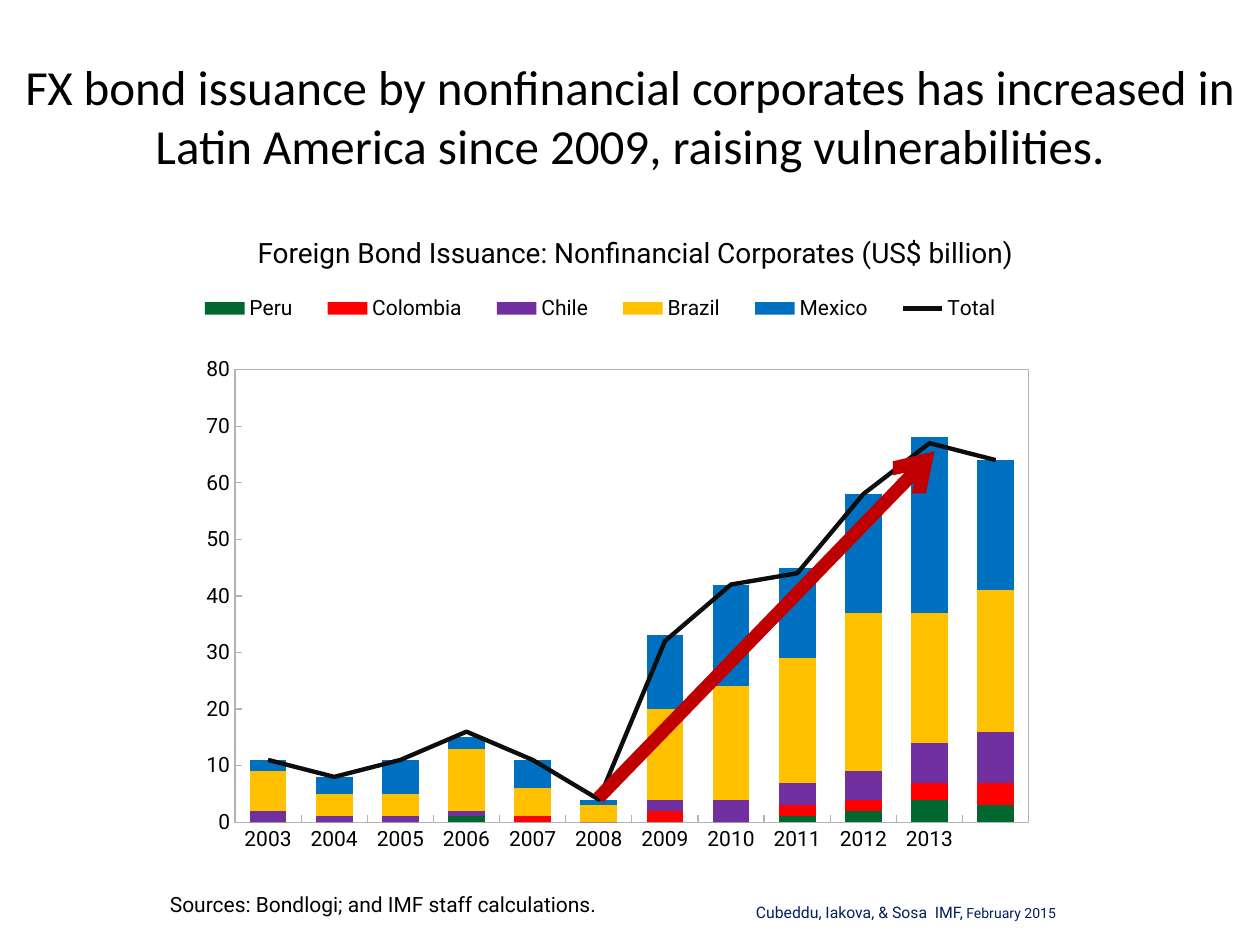
from dataclasses import dataclass

from lxml import etree
from pptx import Presentation
from pptx.chart.data import CategoryChartData
from pptx.dml.color import RGBColor
from pptx.enum.chart import XL_CHART_TYPE, XL_LEGEND_POSITION, XL_TICK_MARK
from pptx.enum.shapes import MSO_CONNECTOR
from pptx.enum.text import MSO_ANCHOR, MSO_AUTO_SIZE, PP_ALIGN
from pptx.oxml import parse_xml
from pptx.oxml.ns import qn
from pptx.util import Pt


@dataclass(frozen=True)
class Theme:
    title_font: str = "Calibri"
    body_font: str = "Roboto"
    title_size: int = 28
    heading_size: int = 16
    body_size: int = 12
    credit_size: int = 9
    date_size: int = 8
    text: str = "000000"
    credit: str = "002060"
    axis: str = "B3B3B3"
    total: str = "0D0D0D"
    arrow: str = "C00000"


THEME = Theme()
NAMESPACES = (
    'xmlns:c="http://schemas.openxmlformats.org/drawingml/2006/chart" '
    'xmlns:a="http://schemas.openxmlformats.org/drawingml/2006/main"'
)

# The last bar carries no year label
YEARS = [str(year) for year in range(2003, 2014)] + [""]
COUNTRIES = {
    "Peru": ("00682F", (0, 0, 0, 1, 0, 0, 0, 0, 1, 2, 4, 3)),
    "Colombia": ("FF0000", (0, 0, 0, 0, 1, 0, 2, 0, 2, 2, 3, 4)),
    "Chile": ("7030A0", (2, 1, 1, 1, 0, 0, 2, 4, 4, 5, 7, 9)),
    "Brazil": ("FFC000", (7, 4, 4, 11, 5, 3, 16, 20, 22, 28, 23, 25)),
    "Mexico": ("0070C0", (2, 3, 6, 2, 5, 1, 13, 18, 16, 21, 31, 23)),
}
TOTAL = (11, 8, 11, 16, 11, 4, 32, 42, 44, 58, 67, 64)


def color(code):
    return RGBColor.from_string(code)


def format_font(font, name, size, code):
    font.name = name
    font.size = Pt(size)
    font.color.rgb = color(code)


def add_title(slide, text):
    title = slide.shapes.title
    title.left, title.top, title.width, title.height = Pt(0), Pt(30), Pt(720), Pt(72)
    frame = title.text_frame
    frame.text = text
    frame.auto_size = MSO_AUTO_SIZE.NONE
    frame.vertical_anchor = MSO_ANCHOR.MIDDLE
    para = frame.paragraphs[0]
    para.alignment = PP_ALIGN.CENTER
    format_font(para.runs[0].font, THEME.title_font, THEME.title_size, THEME.text)


def add_label(slide, bounds, spans, code, align=PP_ALIGN.CENTER,
              anchor=MSO_ANCHOR.TOP, margins=(0, 0)):
    """Add one paragraph made of (text, size) spans."""
    box = slide.shapes.add_textbox(*map(Pt, bounds))
    frame = box.text_frame
    frame.word_wrap = True
    frame.vertical_anchor = anchor
    frame.margin_left = frame.margin_right = Pt(margins[0])
    frame.margin_top = frame.margin_bottom = Pt(margins[1])
    para = frame.paragraphs[0]
    para.alignment = align
    for text, size in spans:
        span = para.add_run()
        span.text = text
        format_font(span.font, THEME.body_font, size, code)


def manual_layout(left, top, width, height, inner=False):
    target = '<c:layoutTarget val="inner"/>' if inner else ""
    return parse_xml(
        f"<c:layout {NAMESPACES}><c:manualLayout>{target}"
        '<c:xMode val="edge"/><c:yMode val="edge"/>'
        f'<c:x val="{left}"/><c:y val="{top}"/><c:w val="{width}"/><c:h val="{height}"/>'
        "</c:manualLayout></c:layout>"
    )


def remove_children(parent, tag):
    for child in parent.findall(qn(tag)):
        parent.remove(child)


def move_last_series_to_line(plot_area):
    """Turn the last bar series into a line on the same axes."""
    bars = plot_area.find(qn("c:barChart"))
    series = bars.findall(qn("c:ser"))[-1]
    remove_children(series, "c:invertIfNegative")
    line = parse_xml(
        f'<c:lineChart {NAMESPACES}><c:grouping val="standard"/>'
        '<c:varyColors val="0"/><c:marker val="1"/></c:lineChart>'
    )
    line.insert(2, series)
    for axis in bars.findall(qn("c:axId")):
        etree.SubElement(line, qn("c:axId")).set("val", axis.get("val"))
    bars.addnext(line)


def format_axis(axis):
    axis.has_major_gridlines = False
    axis.major_tick_mark = XL_TICK_MARK.INSIDE
    axis.minor_tick_mark = XL_TICK_MARK.NONE
    axis.format.line.color.rgb = color(THEME.axis)
    axis.format.line.width = Pt(0.75)


def add_issuance_chart(slide):
    data = CategoryChartData(number_format="General")
    data.categories = YEARS
    for name, (_, values) in COUNTRIES.items():
        data.add_series(name, values)
    data.add_series("Total", TOTAL)
    chart = slide.shapes.add_chart(
        XL_CHART_TYPE.COLUMN_STACKED, Pt(96), Pt(153.5), Pt(504), Pt(350), data
    ).chart
    chart.has_title = False
    format_font(chart.font, THEME.body_font, THEME.body_size, THEME.text)

    # Stacked country bars
    bars = chart.plots[0]
    bars.gap_width = 80
    bars.overlap = 100
    bars.vary_by_categories = False
    for series, (code, _) in zip(bars.series, COUNTRIES.values()):
        series.format.fill.solid()
        series.format.fill.fore_color.rgb = color(code)

    # Total line
    plot_area = bars._element.getparent()
    move_last_series_to_line(plot_area)
    total = chart.plots[1].series[0]
    total.smooth = False
    total.format.line.color.rgb = color(THEME.total)
    total.format.line.width = Pt(2.5)
    total._element.find(qn("c:spPr")).addnext(
        parse_xml(f'<c:marker {NAMESPACES}><c:symbol val="none"/></c:marker>')
    )

    # Axes and plot frame
    format_axis(chart.category_axis)
    format_axis(chart.value_axis)
    chart.value_axis.minimum_scale = 0
    chart.value_axis.maximum_scale = 80
    chart.value_axis.major_unit = 10
    remove_children(plot_area, "c:layout")
    plot_area.insert(0, manual_layout(0.076, 0.165, 0.9, 0.739, inner=True))
    plot_area.append(parse_xml(
        f'<c:spPr {NAMESPACES}><a:noFill/><a:ln w="{int(Pt(0.75))}"><a:solidFill>'
        f'<a:srgbClr val="{THEME.axis}"/></a:solidFill></a:ln></c:spPr>'
    ))

    # Legend above the plot
    chart.has_legend = True
    legend = chart.legend
    legend.position = XL_LEGEND_POSITION.BOTTOM
    legend.include_in_layout = False
    remove_children(legend._element, "c:layout")
    layout = manual_layout(0.01, 0.03, 0.96, 0.07)
    legend._element.find(qn("c:legendPos")).addnext(layout)


def add_arrow(slide, start, end):
    arrow = slide.shapes.add_connector(MSO_CONNECTOR.STRAIGHT, *map(Pt, start + end))
    arrow.line.color.rgb = color(THEME.arrow)
    arrow.line.width = Pt(7.5)
    properties = arrow._element.spPr
    etree.SubElement(properties.find(qn("a:ln")), qn("a:tailEnd")).set("type", "arrow")
    etree.SubElement(properties, qn("a:effectLst"))


def main():
    deck = Presentation()
    deck.slide_width, deck.slide_height = Pt(720), Pt(540)
    slide = deck.slides.add_slide(deck.slide_layouts[5])

    add_title(slide, "FX bond issuance by nonfinancial corporates has increased in "
                     "Latin America since 2009, raising vulnerabilities.")
    # Credit, chart heading, chart
    add_label(slide, (351.5, 516, 332.5, 48),
              [("Cubeddu, Iakova, & Sosa  IMF,", THEME.credit_size),
               (" February 2015", THEME.date_size)], THEME.credit)
    add_label(slide, (114, 120, 498, 48),
              [("Foreign Bond Issuance: Nonfinancial Corporates (US$ billion)",
                THEME.heading_size)], THEME.text, anchor=MSO_ANCHOR.MIDDLE)
    add_issuance_chart(slide)
    # Sources and trend arrow
    add_label(slide, (90, 506, 258, 22),
              [("Sources: Bondlogi; and IMF staff calculations.", THEME.body_size)],
              THEME.text, align=PP_ALIGN.LEFT, margins=(7.2, 3.6))
    add_arrow(slide, (342, 456), (534, 258))
    deck.save("out.pptx")


if __name__ == "__main__":
    main()
